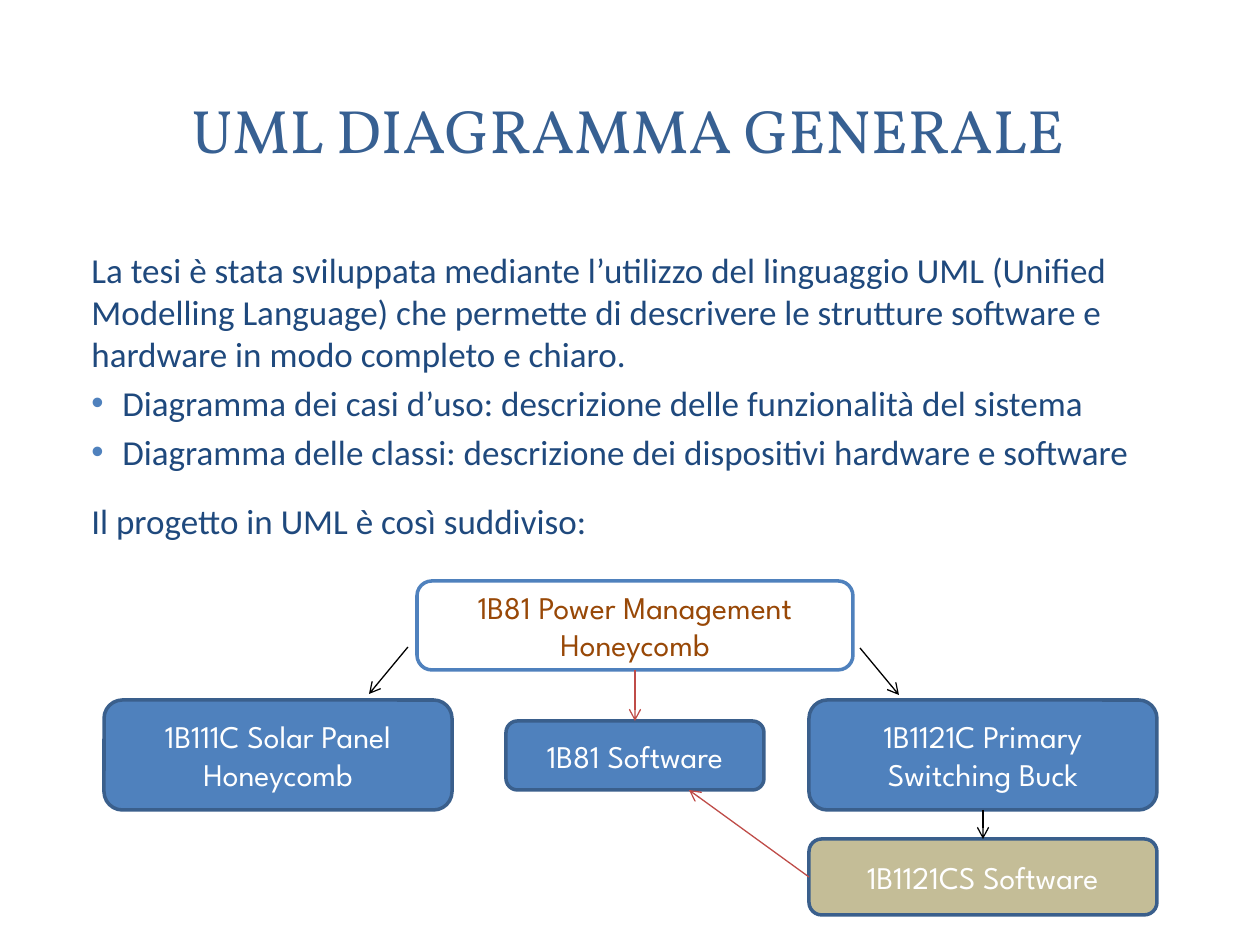
"""Build the UML overview slide with its project breakdown."""
from lxml import etree
from pptx import Presentation, util as u
from pptx.dml.color import RGBColor
from pptx.enum import shapes, text
from pptx.oxml.ns import qn

SCALE = 914400 / 126
BLUE = RGBColor(0x4F, 0x81, 0xBD)
EDGE = RGBColor(0x3A, 0x5F, 0x8C)
NAVY = RGBColor(0x1F, 0x49, 0x7D)
STEEL = RGBColor(0x37, 0x60, 0x92)
BROWN = RGBColor(0x98, 0x48, 0x07)
SAND = RGBColor(0xC4, 0xBD, 0x97)
RED = RGBColor(0xBF, 0x4C, 0x48)
WHITE = RGBColor(0xFF, 0xFF, 0xFF)
BLACK = RGBColor(0, 0, 0)

TITLE = "UML DIAGRAMMA GENERALE"
BODY = [
    ("La tesi è stata sviluppata mediante l’utilizzo del linguaggio UML "
     "(Unified Modelling Language) che permette di descrivere le strutture "
     "software e hardware in modo completo e chiaro.", False, 0),
    ("Diagramma dei casi d’uso: descrizione delle funzionalità del sistema",
     True, 4),
    ("Diagramma delle classi: descrizione dei dispositivi hardware e software",
     True, 4),
    ("Il progetto in UML è così suddiviso:", False, 15.5),
]
BOXES = {
    "power": ("1B81 Power Management Honeycomb", (417, 581, 436, 89),
              WHITE, BLUE, BROWN),
    "solar": ("1B111C Solar Panel Honeycomb", (104, 700, 348, 110),
              BLUE, EDGE, WHITE),
    "buck": ("1B1121C Primary Switching Buck", (809, 700, 348, 110),
             BLUE, EDGE, WHITE),
    "code": ("1B1121CS Software", (809, 839, 348, 76), SAND, EDGE, WHITE),
    "soft": ("1B81 Software", (506, 721, 258, 69), BLUE, EDGE, WHITE),
}
ARROWS = [
    ((408, 647), (369, 694), BLACK),
    ((860, 648), (899, 695), BLACK),
    (("buck", 2), ("code", 0), BLACK),
    (("power", 2), ("soft", 0), RED),
    (("code", 1), (689, 790), RED),
]


def px(*vals):
    return [u.Emu(round(val * SCALE)) for val in vals]


def style(para, name, size, color):
    para.font.name = name
    para.font.size = u.Pt(size)
    para.font.color.rgb = color


def bullet(para):
    props = para._p.get_or_add_pPr()
    tint = etree.SubElement(props, qn("a:buClr"))
    etree.SubElement(tint, qn("a:srgbClr"), val=str(BLUE))
    etree.SubElement(props, qn("a:buFont"), typeface="Arial")
    etree.SubElement(props, qn("a:buChar"), char="•")


def add_title(slide):
    title = slide.shapes.title
    title.left, title.top, title.width, title.height = px(59, 57, 1138, 144)
    frame = title.text_frame
    frame.text = TITLE
    frame.auto_size = text.MSO_AUTO_SIZE.NONE
    frame.vertical_anchor = text.MSO_ANCHOR.MIDDLE
    para = frame.paragraphs[0]
    para.alignment = text.PP_ALIGN.CENTER
    style(para, "Vollkorn", 35, STEEL)


def add_body(slide):
    frame = slide.shapes.add_textbox(*px(63, 242, 1134, 602)).text_frame
    frame.word_wrap = True
    for num, (words, mark, gap) in enumerate(BODY):
        para = frame.add_paragraph() if num else frame.paragraphs[0]
        para.text = words
        para.space_before = u.Pt(gap)
        style(para, "Calibri", 20, NAVY)
        left, first = px(47, -31) if mark else px(16, 0)
        props = para._p.get_or_add_pPr()
        props.set("marL", str(left))
        props.set("indent", str(first))
        if mark:
            bullet(para)


def add_box(slide, words, place, fill, edge, ink):
    box = slide.shapes.add_shape(
        shapes.MSO_SHAPE.ROUNDED_RECTANGLE, *px(*place))
    box.shadow.inherit = False
    box.fill.solid()
    box.fill.fore_color.rgb = fill
    box.line.color.rgb = edge
    box.line.width = u.Pt(2)
    frame = box.text_frame
    frame.word_wrap = True
    frame.vertical_anchor = text.MSO_ANCHOR.MIDDLE
    para = frame.paragraphs[0]
    para.text = words
    para.alignment = text.PP_ALIGN.CENTER
    style(para, "League Spartan", 18, ink)
    return box


def add_arrow(slide, boxes, start, end, color):
    fixed = [(0, 0) if tip[0] in boxes else tip for tip in (start, end)]
    line = slide.shapes.add_connector(
        shapes.MSO_CONNECTOR.STRAIGHT, *px(*fixed[0], *fixed[1]))
    for tip, join in ((start, line.begin_connect), (end, line.end_connect)):
        if tip[0] in boxes:
            join(boxes[tip[0]], tip[1])
    line.line.color.rgb = color
    line.line.width = u.Pt(0.75)
    etree.SubElement(line.line._get_or_add_ln(), qn("a:tailEnd"), type="arrow")
    etree.SubElement(line._element.spPr, qn("a:effectLst"))


def main():
    deck = Presentation()
    deck.slide_width, deck.slide_height = px(1260, 945)
    slide = deck.slides.add_slide(deck.slide_layouts[5])
    add_title(slide)
    add_body(slide)
    boxes = {key: add_box(slide, *row) for key, row in BOXES.items()}
    for row in ARROWS:
        add_arrow(slide, boxes, *row)
    deck.save("out.pptx")


if __name__ == "__main__":
    main()
